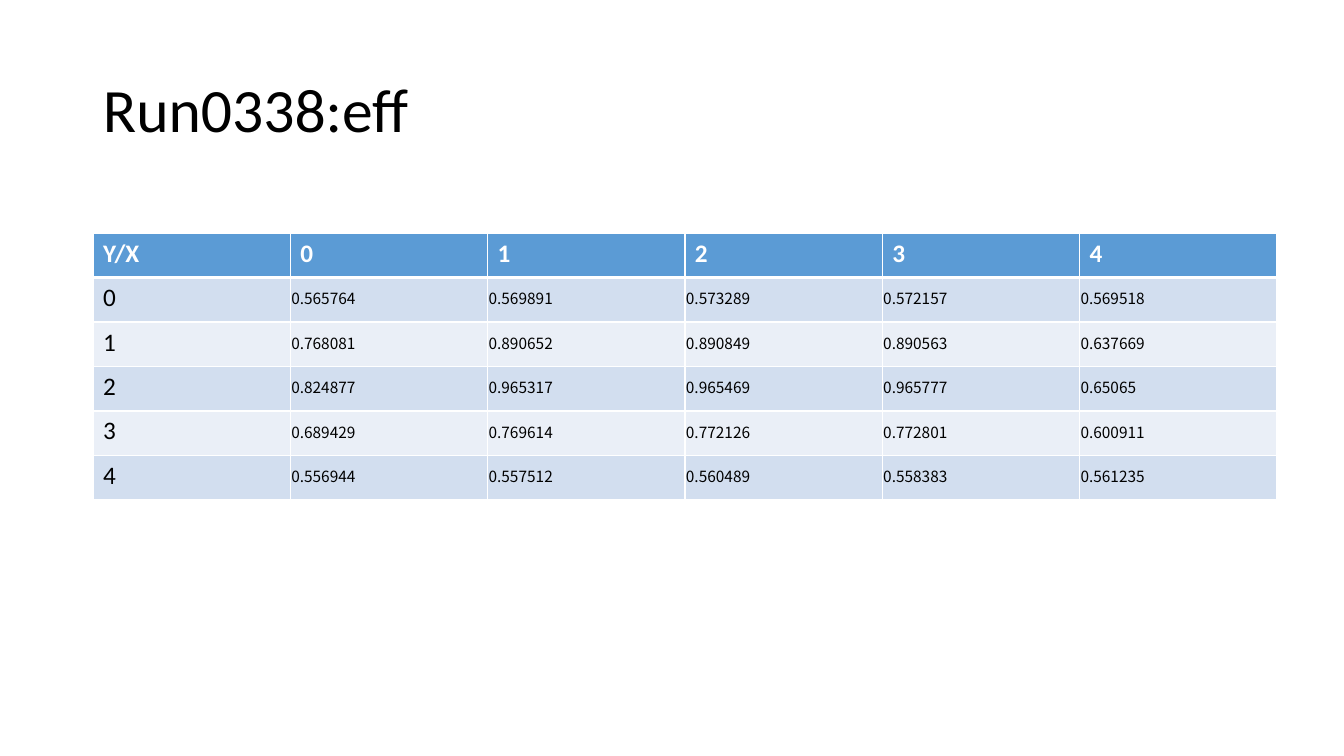
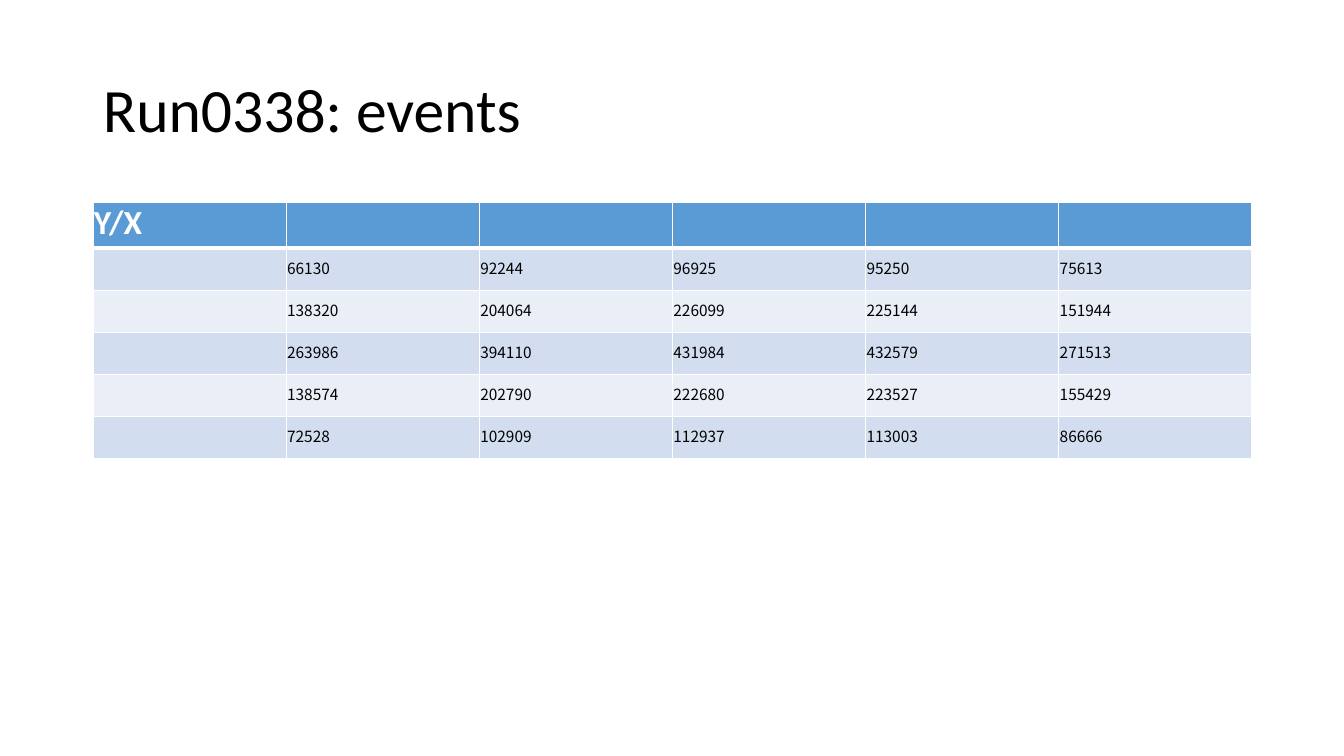
from dataclasses import dataclass

import pptx
import pptx.dml.color
import pptx.enum.text
import pptx.oxml
import pptx.oxml.ns
import pptx.util

HUES = {
    "page": "FFFFFF",
    "ink": "000000",
    "head": "5B9BD5",
    "odd": "D2DEEF",
    "even": "EAEFF7",
}
SANS = "Calibri"
CJK = "Noto Sans CJK SC"
MIDDLE = pptx.enum.text.MSO_ANCHOR.MIDDLE


@dataclass
class Grid:
    title: str
    top: int
    width: int
    height: int
    labels: list[str]
    values: list[str]
    size: int
    tight: bool = False


GRIDS = [
    Grid("Run0338:eff", 233, 1184, 267, ["0", "1", "2", "3", "4"], [
        "0.565764 0.569891 0.573289 0.572157 0.569518",
        "0.768081 0.890652 0.890849 0.890563 0.637669",
        "0.824877 0.965317 0.965469 0.965777 0.65065",
        "0.689429 0.769614 0.772126 0.772801 0.600911",
        "0.556944 0.557512 0.560489 0.558383 0.561235",
    ], size=18),
    Grid("Run0338: events", 202, 1159, 252, [""] * 5, [
        "66130 92244 96925 95250 75613",
        "138320 204064 226099 225144 151944",
        "263986 394110 431984 432579 271513",
        "138574 202790 222680 223527 155429",
        "72528 102909 112937 113003 86666",
    ], size=24, tight=True),
]


def px(count: int) -> int:
    return round(count * 914400 / 100.8)


def hue(name: str) -> pptx.dml.color.RGBColor:
    return pptx.dml.color.RGBColor.from_string(HUES[name])


def write(frame, text: str, *, size: int, font: str = SANS,
          color: str = "ink", bold: bool = False, space: float = 1.0) -> None:
    para = frame.paragraphs[0]
    para.line_spacing = space
    run = para.add_run()
    run.text = text
    run.font.size = pptx.util.Pt(size)
    run.font.name = font
    run.font.bold = bold
    run.font.color.rgb = hue(color)


def border(cell, row: int) -> None:
    """Rule all four sides, with a thick line under the header."""
    thick = {0: "B", 1: "T"}.get(row)
    props = cell._tc.get_or_add_tcPr()
    for side in "LRTB":
        width = pptx.util.Pt(3 if side == thick else 1)
        props.append(pptx.oxml.parse_xml(
            f'<a:ln{side} {pptx.oxml.ns.nsdecls("a")} w="{width}"><a:solidFill>'
            f'<a:srgbClr val="{HUES["page"]}"/></a:solidFill></a:ln{side}>'))


def squeeze(cell) -> None:
    cell.vertical_anchor = MIDDLE
    cell.margin_left = cell.margin_right = cell.margin_top = px(1)
    cell.margin_bottom = px(5)


def add_title(slide, text: str) -> None:
    box = slide.shapes.add_textbox(px(93), px(40), px(1159), px(146))
    frame = box.text_frame
    frame.word_wrap = True
    frame.vertical_anchor = MIDDLE
    write(frame, text, size=44, space=0.9)


def add_grid(slide, grid: Grid) -> None:
    rows = [["Y/X", *grid.labels]]
    rows += [[label, *line.split()]
             for label, line in zip(grid.labels, grid.values)]
    table = slide.shapes.add_table(
        len(rows), len(rows[0]), px(93), px(grid.top),
        px(grid.width), px(grid.height)).table
    for r, row in enumerate(rows):
        fill = "head" if r == 0 else "odd" if r % 2 else "even"
        for c, text in enumerate(row):
            cell = table.cell(r, c)
            border(cell, r)
            cell.fill.solid()
            cell.fill.fore_color.rgb = hue(fill)
            if not text:
                continue
            data = r > 0 and c > 0
            if data or grid.tight:
                squeeze(cell)
            if data:
                write(cell.text_frame, text, size=11, font=CJK)
            else:
                write(cell.text_frame, text, size=grid.size, bold=r == 0,
                      color="ink" if r else "page")


def main() -> None:
    deck = pptx.Presentation()
    deck.slide_width, deck.slide_height = px(1344), px(756)
    for grid in GRIDS:
        slide = deck.slides.add_slide(deck.slide_layouts[6])
        add_title(slide, grid.title)
        add_grid(slide, grid)
    deck.save("out.pptx")


if __name__ == "__main__":
    main()
